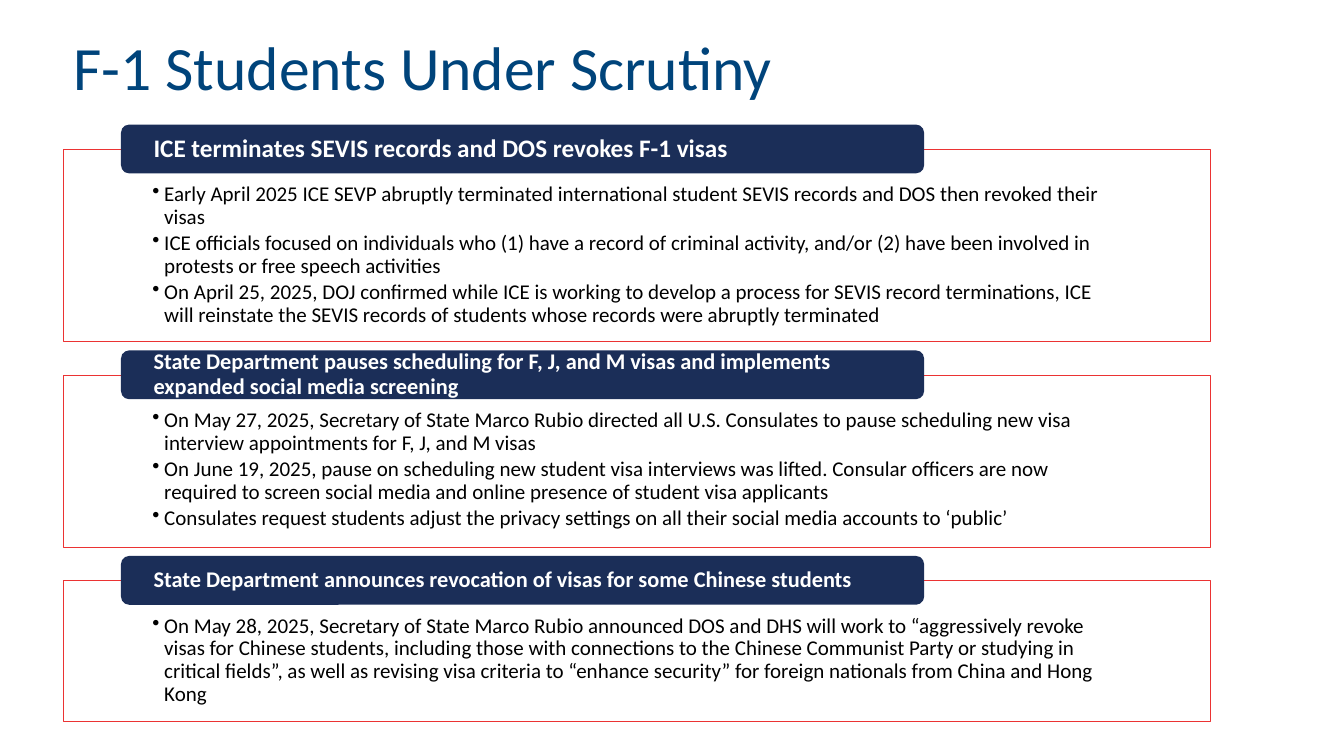
from pptx import Presentation
from pptx.dml.color import RGBColor
from pptx.enum.shapes import MSO_SHAPE as Shape
from pptx.enum.text import MSO_ANCHOR as Anchor, MSO_AUTO_SIZE as AutoSize, PP_ALIGN as Align
from pptx.oxml.ns import qn
from pptx.util import Cm, Pt
from lxml.etree import SubElement

FONT = "Calibri"
TITLE_BLUE, NAVY, RED, WHITE, BLACK = "00447B", "1B2E58", "EB3333", "FFFFFF", "000000"

PANEL_LEFT, PANEL_WIDTH = 1.6, 28.9
FIRST_TOP, PANEL_GAP = 3.76, 0.84

# Heading, heading size, panel height, bullets
SECTIONS = [
    ("ICE terminates SEVIS records and DOS revokes F-1 visas", 18, 4.85, [
        "Early April 2025 ICE SEVP abruptly terminated international student SEVIS records "
        "and DOS then revoked their visas",
        "ICE officials focused on individuals who (1) have a record of criminal activity, "
        "and/or (2) have been involved in protests or free speech activities",
        "On April 25, 2025, DOJ confirmed while ICE is working to develop a process for SEVIS "
        "record terminations, ICE will reinstate the SEVIS records of students whose records "
        "were abruptly terminated",
    ]),
    ("State Department pauses scheduling for F, J, and M visas and implements expanded "
     "social media screening", 16, 4.34, [
        "On May 27, 2025, Secretary of State Marco Rubio directed all U.S. Consulates to pause "
        "scheduling new visa interview appointments for F, J, and M visas",
        "On June 19, 2025, pause on scheduling new student visa interviews was lifted. Consular "
        "officers are now required to screen social media and online presence of student visa "
        "applicants",
        "Consulates request students adjust the privacy settings on all their social media "
        "accounts to ‘public’",
    ]),
    ("State Department announces revocation of visas for some Chinese students", 16, 3.56, [
        "On May 28, 2025, Secretary of State Marco Rubio announced DOS and DHS will work to "
        "“aggressively revoke visas for Chinese students, including those with connections to "
        "the Chinese Communist Party or studying in critical fields”, as well as revising visa "
        "criteria to “enhance security” for foreign nationals from China and Hong Kong",
    ]),
]


def color(hex_string):
    return RGBColor.from_string(hex_string)


def add_run(paragraph, text, size, hex_string, bold=False):
    paragraph.alignment = Align.LEFT
    paragraph.line_spacing = 0.9
    run = paragraph.add_run()
    run.text = text
    font = run.font
    font.name, font.size, font.bold = FONT, Pt(size), bold
    font.color.rgb = color(hex_string)


def set_frame(shape, anchor, left, top, right, bottom):
    frame = shape.text_frame
    frame.word_wrap = True
    frame.auto_size = AutoSize.NONE
    frame.vertical_anchor = anchor
    frame.margin_left, frame.margin_top = Cm(left), Cm(top)
    frame.margin_right, frame.margin_bottom = Cm(right), Cm(bottom)
    return frame


def add_box(slide, kind, left, top, width, height, fill):
    shape = slide.shapes.add_shape(kind, Cm(left), Cm(top), Cm(width), Cm(height))
    shape.shadow.inherit = False
    shape.fill.solid()
    shape.fill.fore_color.rgb = color(fill)
    shape.line.fill.background()
    return shape


def set_bullet(paragraph):
    paragraph.level = 1
    properties = paragraph._p.get_or_add_pPr()
    properties.set("marL", str(Cm(0.3)))
    properties.set("indent", str(-Cm(0.3)))
    SubElement(properties, qn("a:buChar")).set("char", "•")


def add_title(slide, text, left, top, width, height):
    title = slide.shapes.title
    title.left, title.top, title.width, title.height = Cm(left), Cm(top), Cm(width), Cm(height)
    frame = set_frame(title, Anchor.MIDDLE, 0.25, 0.13, 0.25, 0.13)
    add_run(frame.paragraphs[0], text, 44, TITLE_BLUE)


def add_section(slide, heading, heading_size, bullets, left, top, width, height):
    # Outlined panel with bullets
    panel = add_box(slide, Shape.RECTANGLE, left, top, width, height, WHITE)
    fill_color = panel._element.spPr.find(qn("a:solidFill"))[0]
    SubElement(fill_color, qn("a:alpha")).set("val", "90000")
    panel.line.color.rgb = color(RED)
    panel.line.width = Pt(0.5)
    frame = set_frame(panel, Anchor.TOP, 2.24, 0.87, 2.24, 0.3)
    for index, bullet in enumerate(bullets):
        paragraph = frame.add_paragraph() if index else frame.paragraphs[0]
        set_bullet(paragraph)
        paragraph.space_after = Pt(2.5)
        add_run(paragraph, bullet, 15, BLACK)

    # Heading tab across the panel's top edge
    tab = add_box(slide, Shape.ROUNDED_RECTANGLE, left + 1.45, top - 0.62, 20.24, 1.23, NAVY)
    frame = set_frame(tab, Anchor.MIDDLE, 0.76, 0, 0.76, 0)
    add_run(frame.paragraphs[0], heading, heading_size, WHITE, bold=True)


def main():
    presentation = Presentation()
    presentation.slide_width, presentation.slide_height = Cm(33.87), Cm(19.05)
    slide = presentation.slides.add_slide(presentation.slide_layouts[5])

    add_title(slide, "F-1 Students Under Scrutiny", PANEL_LEFT, 0.64, 27.1, 2.26)
    top = FIRST_TOP
    for heading, heading_size, height, bullets in SECTIONS:
        add_section(slide, heading, heading_size, bullets, PANEL_LEFT, top, PANEL_WIDTH, height)
        top += height + PANEL_GAP

    presentation.save("out.pptx")


if __name__ == "__main__":
    main()
